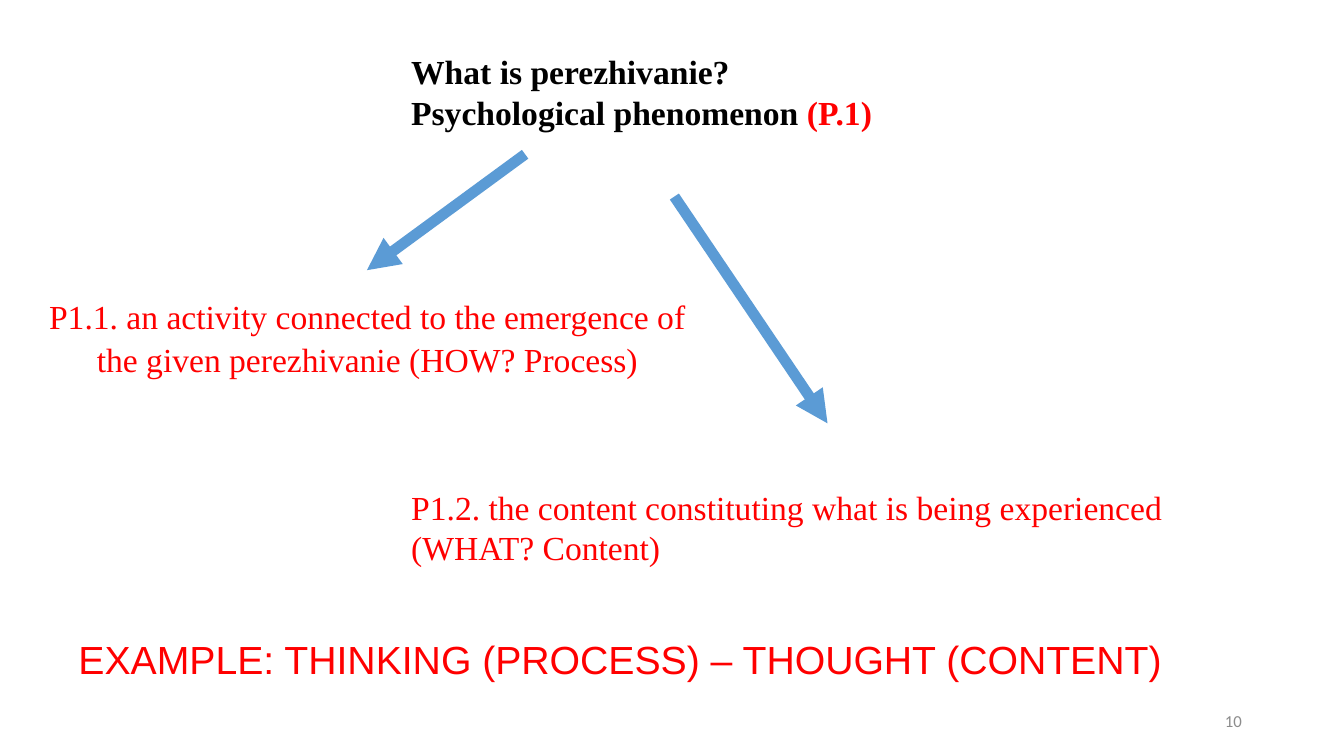
from dataclasses import dataclass

from lxml import etree
from pptx import Presentation
from pptx import util as u
from pptx.dml.color import RGBColor
from pptx.enum import shapes, text
from pptx.oxml.ns import qn

COLORS = {"black": "000000", "red": "FF0000", "blue": "5B9BD5", "gray": "8C8C8C"}
SERIF = "Times New Roman"
ARROW_WIDTH = 7.75


@dataclass
class Span:
    words: str
    color: str = "red"


@dataclass
class Label:
    left: float
    top: float
    width: float
    height: float
    lines: list[list[Span]]
    font: str = SERIF
    size: float = 24
    bold: bool = False
    align: text.PP_ALIGN = text.PP_ALIGN.LEFT
    anchor: text.MSO_ANCHOR = text.MSO_ANCHOR.TOP
    spacing: float = 1.0
    wrap: bool = True


@dataclass
class Arrow:
    start: tuple[float, float]
    end: tuple[float, float]


LABELS = [
    Label(678.2, 500.4, 216, 28.8, [[Span("10", "gray")]], font="Calibri", size=12,
          align=text.PP_ALIGN.RIGHT, anchor=text.MSO_ANCHOR.MIDDLE),
    Label(286.6, 33.1, 480.2, 65.5, [
        [Span("What is perezhivanie?", "black")],
        [Span("Psychological phenomenon ", "black"), Span("(P.1)")],
    ], bold=True),
    Label(22.3, 205.9, 480.2, 69.8, [
        [Span("P1.1. an activity connected to the emergence of "
              "the given perezhivanie (HOW? Process)")],
    ], align=text.PP_ALIGN.CENTER, spacing=1.07),
    Label(286.6, 344.2, 555.8, 65.5, [
        [Span("P1.2. the content constituting what is being experienced")],
        [Span("(WHAT? Content)")],
    ], wrap=False),
    Label(49, 450, 845.3, 41, [
        [Span("EXAMPLE: THINKING (PROCESS) – THOUGHT (CONTENT)")],
    ], font="Arial", size=28),
]

ARROWS = [
    Arrow((375.1, 110.2), (262.1, 193)),
    Arrow((481.7, 140.4), (591.1, 302.4)),
]


def color_of(name: str) -> RGBColor:
    return RGBColor.from_string(COLORS[name])


def draw_label(page, label: Label) -> None:
    box = page.shapes.add_textbox(u.Pt(label.left), u.Pt(label.top),
                                  u.Pt(label.width), u.Pt(label.height))
    frame = box.text_frame
    frame.word_wrap = label.wrap
    frame.vertical_anchor = label.anchor
    for index, line in enumerate(label.lines):
        para = frame.add_paragraph() if index else frame.paragraphs[0]
        para.alignment = label.align
        para.line_spacing = label.spacing
        para.font.name = label.font
        para.font.size = u.Pt(label.size)
        para.font.bold = label.bold
        for span in line:
            run = para.add_run()
            run.text = span.words
            run.font.color.rgb = color_of(span.color)


def draw_arrow(page, arrow: Arrow) -> None:
    ends = [u.Pt(value) for value in (*arrow.start, *arrow.end)]
    connector = page.shapes.add_connector(shapes.MSO_CONNECTOR.STRAIGHT, *ends)
    connector.line.color.rgb = color_of("blue")
    connector.line.width = u.Pt(ARROW_WIDTH)
    properties = connector._element.spPr
    etree.SubElement(properties.find(qn("a:ln")), qn("a:tailEnd"), type="triangle")
    etree.SubElement(properties, qn("a:effectLst"))


def main() -> None:
    deck = Presentation()
    deck.slide_width = u.Pt(960)
    deck.slide_height = u.Pt(540)
    page = deck.slides.add_slide(deck.slide_layouts[6])
    for label in LABELS:
        draw_label(page, label)
    for arrow in ARROWS:
        draw_arrow(page, arrow)
    deck.save("out.pptx")


if __name__ == "__main__":
    main()
